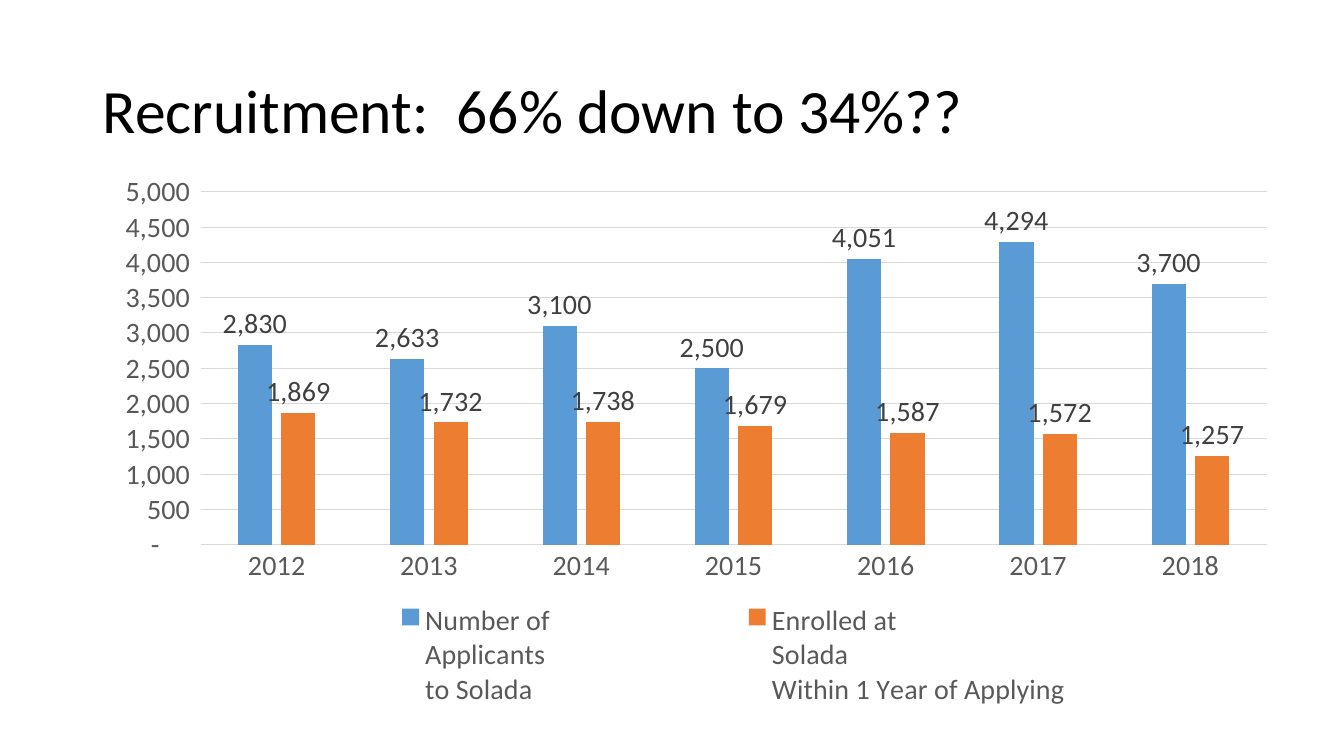
import lxml.etree
import pptx
import pptx.chart.data
import pptx.dml.color
import pptx.enum.chart
import pptx.enum.text
import pptx.oxml.ns
import pptx.util
from pptx.util import Inches

RGBColor = pptx.dml.color.RGBColor
BLACK = RGBColor(0x00, 0x00, 0x00)
AXIS_TEXT = RGBColor(0x59, 0x59, 0x59)
LABEL_TEXT = RGBColor(0x40, 0x40, 0x40)
GRID = RGBColor(0xD9, 0xD9, 0xD9)
BLUE = RGBColor(0x5B, 0x9B, 0xD5)
ORANGE = RGBColor(0xED, 0x7D, 0x31)

FONT = "Calibri"
COUNT_FORMAT = r'_(* #,##0_);_(* \(#,##0\);_(* "-"??_);_(@_)'
YEARS = [str(year) for year in range(2012, 2019)]
COUNTS = [
    ("Number of\nApplicants\nto Solada", BLUE,
     (2830, 2633, 3100, 2500, 4051, 4294, 3700)),
    ("Enrolled at\nSolada\nWithin 1 Year of Applying", ORANGE,
     (1869, 1732, 1738, 1679, 1587, 1572, 1257)),
]


def style_font(font, size, color):
    font.name = FONT
    font.size = pptx.util.Pt(size)
    font.color.rgb = color


def style_line(line, color):
    line.color.rgb = color
    line.width = pptx.util.Pt(0.75)


def set_layout(part, position, **settings):
    """Place a chart part by fractions of the chart, as child number position."""
    qn = pptx.oxml.ns.qn
    for old in part.findall(qn("c:layout")):
        part.remove(old)
    layout = lxml.etree.Element(qn("c:layout"))
    manual = lxml.etree.SubElement(layout, qn("c:manualLayout"))
    for tag, value in settings.items():
        lxml.etree.SubElement(manual, qn("c:" + tag)).set("val", str(value))
    part.insert(position, layout)


def add_title(slide, left, top, width, height):
    frame = slide.shapes.add_textbox(left, top, width, height).text_frame
    frame.word_wrap = True
    frame.vertical_anchor = pptx.enum.text.MSO_ANCHOR.MIDDLE
    heading = frame.paragraphs[0]
    heading.line_spacing = 0.9
    run = heading.add_run()
    run.text = "Recruitment:  66% down to 34%??"
    style_font(run.font, 44, BLACK)


def style_axes(chart):
    years, counts = chart.category_axis, chart.value_axis
    for axis in (years, counts):
        axis.major_tick_mark = pptx.enum.chart.XL_TICK_MARK.NONE
        axis.minor_tick_mark = pptx.enum.chart.XL_TICK_MARK.NONE
        style_font(axis.tick_labels.font, 20, AXIS_TEXT)
    style_line(years.format.line, GRID)
    counts.format.line.fill.background()
    counts.has_major_gridlines = True
    style_line(counts.major_gridlines.format.line, GRID)
    counts.minimum_scale, counts.maximum_scale = 0, 5000
    counts.major_unit = 500
    counts.tick_labels.number_format = COUNT_FORMAT
    counts.tick_labels.number_format_is_linked = False


def style_series(series, color):
    series.format.fill.solid()
    series.format.fill.fore_color.rgb = color
    series.invert_if_negative = False
    labels = series.data_labels
    labels.show_value = True
    labels.position = pptx.enum.chart.XL_LABEL_POSITION.OUTSIDE_END
    labels.number_format = COUNT_FORMAT
    labels.number_format_is_linked = False
    style_font(labels.font, 20, LABEL_TEXT)


def add_legend(chart):
    chart.has_legend = True
    legend = chart.legend
    legend.position = pptx.enum.chart.XL_LEGEND_POSITION.BOTTOM
    legend.include_in_layout = False
    style_font(legend.font, 20, AXIS_TEXT)
    set_layout(legend._element, 1, xMode="edge", yMode="edge",
               x=0.1, y=0.79, w=0.87, h=0.2)


def add_enrollment_chart(slide, left, top, width, height):
    data = pptx.chart.data.CategoryChartData(number_format=COUNT_FORMAT)
    data.categories = YEARS
    for name, _, values in COUNTS:
        data.add_series(name, values)
    chart = slide.shapes.add_chart(
        pptx.enum.chart.XL_CHART_TYPE.COLUMN_CLUSTERED,
        left, top, width, height, data).chart
    style_font(chart.font, 20, BLACK)
    chart.has_title = False
    add_legend(chart)
    style_axes(chart)
    columns = chart.plots[0]
    columns.vary_by_categories = False
    columns.gap_width = 219
    columns.overlap = -27
    for series, (_, color, _) in zip(columns.series, COUNTS):
        style_series(series, color)
    set_layout(columns._element.getparent(), 0, layoutTarget="inner",
               xMode="edge", yMode="edge", x=0.09, y=0.05, w=0.89, h=0.64)


def main():
    deck = pptx.Presentation()
    deck.slide_width, deck.slide_height = Inches(13.33), Inches(7.5)
    slide = deck.slides.add_slide(deck.slide_layouts[6])
    add_title(slide, Inches(0.92), Inches(0.4), Inches(11.5), Inches(1.45))
    add_enrollment_chart(slide, Inches(0.92), Inches(1.63),
                         Inches(11.88), Inches(5.47))
    deck.save("out.pptx")


if __name__ == "__main__":
    main()
